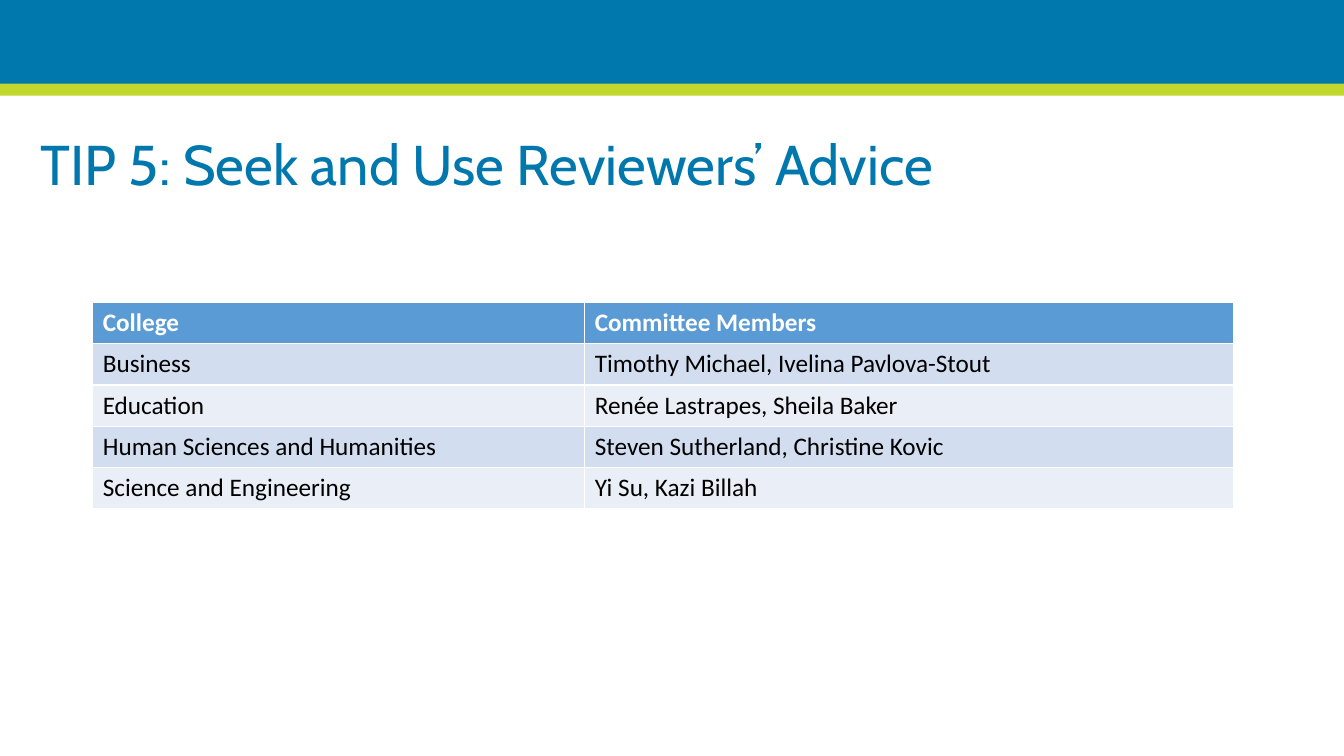
from dataclasses import dataclass

import pptx
import pptx.dml.color
import pptx.enum.shapes
import pptx.enum.text
import pptx.util
from pptx.dml.color import RGBColor
from pptx.util import Inches

BLUE = RGBColor(0x00, 0x78, 0xAD)
LIME = RGBColor(0xC1, 0xD7, 0x2E)
HEAD = RGBColor(0x5B, 0x9B, 0xD5)
ODD = RGBColor(0xD2, 0xDE, 0xEF)
EVEN = RGBColor(0xEA, 0xEF, 0xF7)
WHITE = RGBColor(0xFF, 0xFF, 0xFF)
BLACK = RGBColor(0x00, 0x00, 0x00)

WIDTH = 13.33
COLS = (4.88, 6.44)
ROW = 0.41


@dataclass
class Band:
    top: float
    height: float
    color: RGBColor


@dataclass
class Entry:
    college: str
    members: str


BANDS = [Band(0, 0.85, BLUE), Band(0.83, 0.12, LIME)]
ENTRIES = [
    Entry("College", "Committee Members"),
    Entry("Business", "Timothy Michael, Ivelina Pavlova-Stout"),
    Entry("Education", "Renée Lastrapes, Sheila Baker"),
    Entry("Human Sciences and Humanities", "Steven Sutherland, Christine Kovic"),
    Entry("Science and Engineering", "Yi Su, Kazi Billah"),
]


def add_band(slide: pptx.slide.Slide, band: Band) -> None:
    shape = slide.shapes.add_shape(
        pptx.enum.shapes.MSO_SHAPE.RECTANGLE,
        0, Inches(band.top), Inches(WIDTH), Inches(band.height))
    shape.shadow.inherit = False
    shape.fill.solid()
    shape.fill.fore_color.rgb = band.color
    shape.line.fill.background()


def set_title(slide: pptx.slide.Slide, text: str) -> None:
    title = slide.shapes.title
    title.left, title.top = Inches(0.3), Inches(1.2)
    title.width, title.height = Inches(10.21), Inches(0.92)
    frame = title.text_frame
    frame.text = text
    frame.vertical_anchor = pptx.enum.text.MSO_ANCHOR.MIDDLE
    para = frame.paragraphs[0]
    para.alignment = pptx.enum.text.PP_ALIGN.LEFT
    para.line_spacing = 0.9
    para.font.name = "Cabin"
    para.font.size = pptx.util.Pt(40)
    para.font.color.rgb = BLUE


def fill_cell(cell: pptx.table._Cell, text: str, row: int) -> None:
    head = row == 0
    cell.fill.solid()
    cell.fill.fore_color.rgb = HEAD if head else ODD if row % 2 else EVEN
    cell.text = text
    font = cell.text_frame.paragraphs[0].font
    font.name = "Calibri"
    font.size = pptx.util.Pt(18)
    font.bold = head
    font.color.rgb = WHITE if head else BLACK


def add_roster(slide: pptx.slide.Slide, entries: list[Entry]) -> None:
    """Table of colleges; the default style gives the white cell borders."""
    table = slide.shapes.add_table(
        len(entries), len(COLS), Inches(0.92), Inches(3),
        Inches(sum(COLS)), Inches(ROW * len(entries))).table
    for column, width in zip(table.columns, COLS):
        column.width = Inches(width)
    for row, entry in enumerate(entries):
        for col, text in enumerate((entry.college, entry.members)):
            fill_cell(table.cell(row, col), text, row)


def main() -> None:
    deck = pptx.Presentation()
    deck.slide_width, deck.slide_height = Inches(WIDTH), Inches(7.5)
    slide = deck.slides.add_slide(deck.slide_layouts.get_by_name("Title Only"))
    for band in BANDS:
        add_band(slide, band)
    set_title(slide, "TIP 5: Seek and Use Reviewers’ Advice")
    add_roster(slide, ENTRIES)
    deck.save("out.pptx")


if __name__ == "__main__":
    main()
